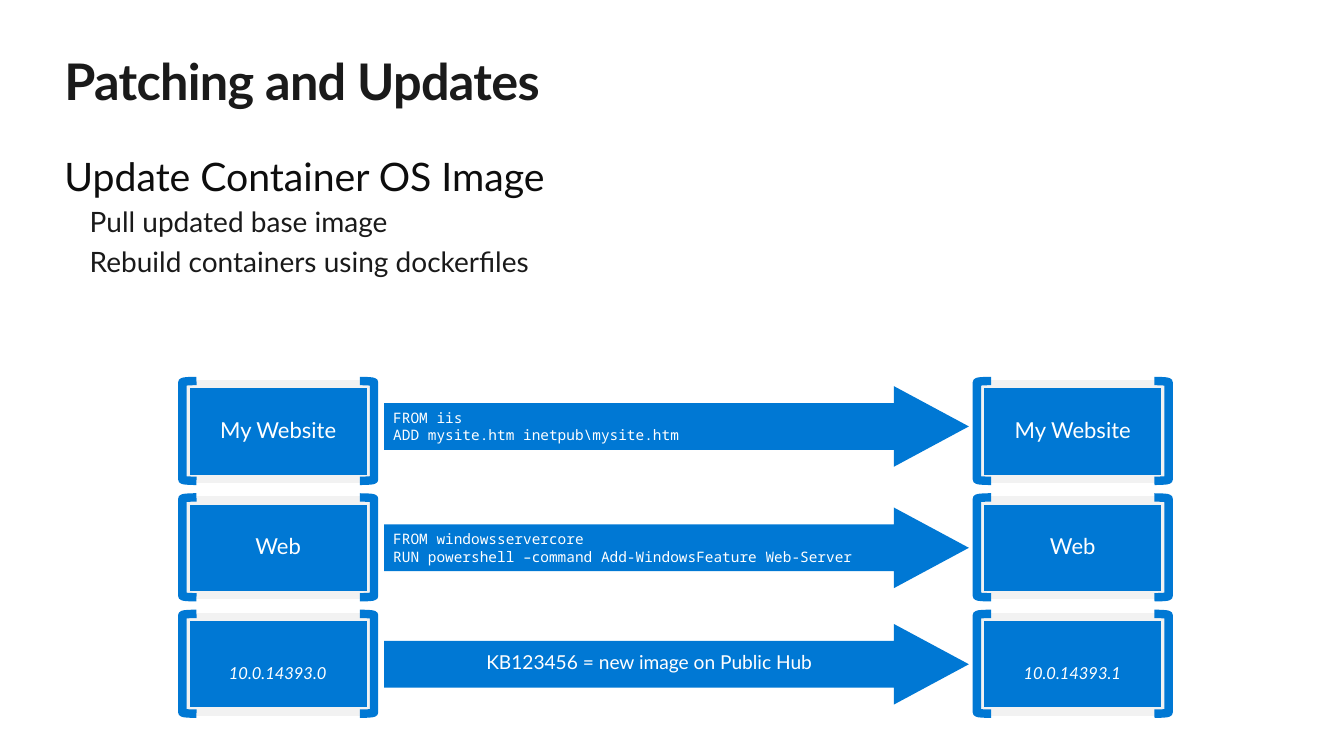
"""Build the slide about patching containers by updating their base image."""
from dataclasses import dataclass

import pptx
import pptx.dml.color
import pptx.enum.shapes
import pptx.enum.text
import pptx.util

SHAPE = pptx.enum.shapes.MSO_SHAPE
ALIGN = pptx.enum.text.PP_ALIGN
ANCHOR = pptx.enum.text.MSO_ANCHOR
Pt = pptx.util.Pt
WIDTH, HEIGHT = pptx.util.Inches(13.33), pptx.util.Inches(7.5)

STACK_LEFTS = (13.8, 72.92)
LAYER_TOP, LAYER_PITCH = 50.8, 15.4
LAYER_WIDTH, LAYER_HEIGHT = 13.8, 12.53
ARROW_LEFT, ARROW_WIDTH, ARROW_HEIGHT = 28.58, 43.51, 10.67


@dataclass(frozen=True)
class Theme:
    """Colours, fonts and type sizes of the slide."""
    title: str = "1A1A1A"
    heading: str = "0D0D0D"
    accent: str = "0078D4"
    frame: str = "F2F2F2"
    light: str = "FFFFFF"
    sans: str = "Lato"
    mono: str = "Noto Sans Mono"
    title_size: float = 36
    heading_size: float = 28
    point_size: float = 20
    layer_size: float = 15.7
    note_size: float = 13.7
    version_size: float = 11.8
    code_size: float = 10.3
    stroke: float = 6


THEME = Theme()


def rgb(code):
    """Return a colour object for a hex code."""
    return pptx.dml.color.RGBColor.from_string(code)


def place(left, top, width, height):
    """Turn percentages of the slide into lengths."""
    return (int(WIDTH * left / 100), int(HEIGHT * top / 100),
            int(WIDTH * width / 100), int(HEIGHT * height / 100))


def style(paragraph, size, color, font=THEME.sans, bold=False, italic=False):
    """Set the font of a paragraph."""
    paragraph.font.size = Pt(size)
    paragraph.font.color.rgb = rgb(color)
    paragraph.font.name = font
    paragraph.font.bold = bold
    paragraph.font.italic = italic


def set_frame(frame, side=0.0, end=0.0, anchor=ANCHOR.TOP):
    """Set wrapping, insets in inches and anchor of a text frame."""
    frame.word_wrap = True
    frame.margin_left = frame.margin_right = pptx.util.Inches(side)
    frame.margin_top = frame.margin_bottom = pptx.util.Inches(end)
    frame.vertical_anchor = anchor


def add_lines(frame, lines):
    """Write one paragraph per line and return the paragraphs."""
    frame.text = "\n".join(lines)
    return frame.paragraphs


def add_label(frame, text, size, italic=False, anchor=ANCHOR.MIDDLE):
    """Write a centred light label."""
    set_frame(frame, 0.2, 0.16, anchor)
    label, = add_lines(frame, [text])
    label.alignment = ALIGN.CENTER
    label.line_spacing = 0.9
    style(label, size, THEME.light, italic=italic)


def add_block(slide, kind, area, fill=None, line=None):
    """Add a flat preset shape."""
    block = slide.shapes.add_shape(kind, *place(*area))
    block.shadow.inherit = False
    if fill:
        block.fill.solid()
        block.fill.fore_color.rgb = rgb(fill)
    else:
        block.fill.background()
    if line:
        block.line.color.rgb = rgb(line)
        block.line.width = Pt(THEME.stroke)
    else:
        block.line.fill.background()
    return block


def add_title(slide, text):
    """Add the slide title."""
    frame = slide.shapes.add_textbox(*place(4.8, 6.67, 90.4, 8.13)).text_frame
    set_frame(frame)
    title, = add_lines(frame, [text])
    style(title, THEME.title_size, THEME.title, bold=True)
    title.runs[0]._r.get_or_add_rPr().set("spc", "-50")


def add_summary(slide, heading, points):
    """Add a heading with indented points."""
    frame = slide.shapes.add_textbox(*place(4.8, 20.13, 45.76, 17.07)).text_frame
    set_frame(frame)
    first, *rest = add_lines(frame, [heading, *points])
    style(first, THEME.heading_size, THEME.heading)
    for point in rest:
        point.level = 1
        point._p.get_or_add_pPr().set("marL", str(pptx.util.Inches(0.25)))
        point.space_before = Pt(4)
        style(point, THEME.point_size, THEME.title)


def add_layer(slide, left, top):
    """Add a bracketed container layer and return its rectangle."""
    layer = add_block(slide, SHAPE.RECTANGLE, (left, top, LAYER_WIDTH, LAYER_HEIGHT),
                      THEME.accent, THEME.frame)
    for bracket, shift in ((SHAPE.RIGHT_BRACKET, 12.98), (SHAPE.LEFT_BRACKET, -0.23)):
        add_block(slide, bracket, (left + shift, top - 0.4, 1.05, 13.2), line=THEME.accent)
    return layer


def add_stack(slide, left, names, version):
    """Add a column of named layers above a versioned base layer."""
    tops = [LAYER_TOP + LAYER_PITCH * row for row in range(len(names) + 1)]
    for name, top in zip(names, tops):
        add_label(add_layer(slide, left, top).text_frame, name, THEME.layer_size)
    add_layer(slide, left, tops[-1])
    area = place(left + 0.3, tops[-1] + 5.2, 13.13, 6.53)
    add_label(slide.shapes.add_textbox(*area).text_frame, version,
              THEME.version_size, italic=True, anchor=ANCHOR.TOP)


def add_arrow(slide, top):
    """Add a wide arrow between the stacks."""
    arrow = add_block(slide, SHAPE.RIGHT_ARROW,
                      (ARROW_LEFT, top, ARROW_WIDTH, ARROW_HEIGHT), THEME.accent)
    arrow.adjustments[0], arrow.adjustments[1] = 0.58, 0.93


def add_code(slide, top, lines):
    """Add build commands on an arrow."""
    frame = slide.shapes.add_textbox(*place(29.26, top + 2.4, 38.78, 6)).text_frame
    set_frame(frame, end=0.05)
    for command in add_lines(frame, lines):
        style(command, THEME.code_size, THEME.light, THEME.mono)


def main():
    """Build and save the slide."""
    deck = pptx.Presentation()
    deck.slide_width, deck.slide_height = WIDTH, HEIGHT
    slide = deck.slides.add_slide(deck.slide_layouts[6])

    add_title(slide, "Patching and Updates")
    add_summary(slide, "Update Container OS Image",
                ["Pull updated base image", "Rebuild containers using dockerfiles"])

    site_top, server_top, base_top = (
        LAYER_TOP + LAYER_PITCH * row + drop for row, drop in enumerate((0.27, 0.93, 0.93)))
    for top in (site_top, server_top, base_top):
        add_arrow(slide, top)
    add_code(slide, site_top, ["FROM iis", "ADD mysite.htm inetpub\\mysite.htm"])
    add_code(slide, server_top, ["FROM windowsservercore",
                                 "RUN powershell –command Add-WindowsFeature Web-Server"])
    patch_note = slide.shapes.add_textbox(*place(ARROW_LEFT, base_top + 1.73, 39.46, 6.93))
    add_label(patch_note.text_frame, "KB123456 = new image on Public Hub", THEME.note_size)

    for left, version in zip(STACK_LEFTS, ("10.0.14393.0", "10.0.14393.1")):
        add_stack(slide, left, ("My Website", "Web"), version)
    deck.save("out.pptx")


if __name__ == "__main__":
    main()
